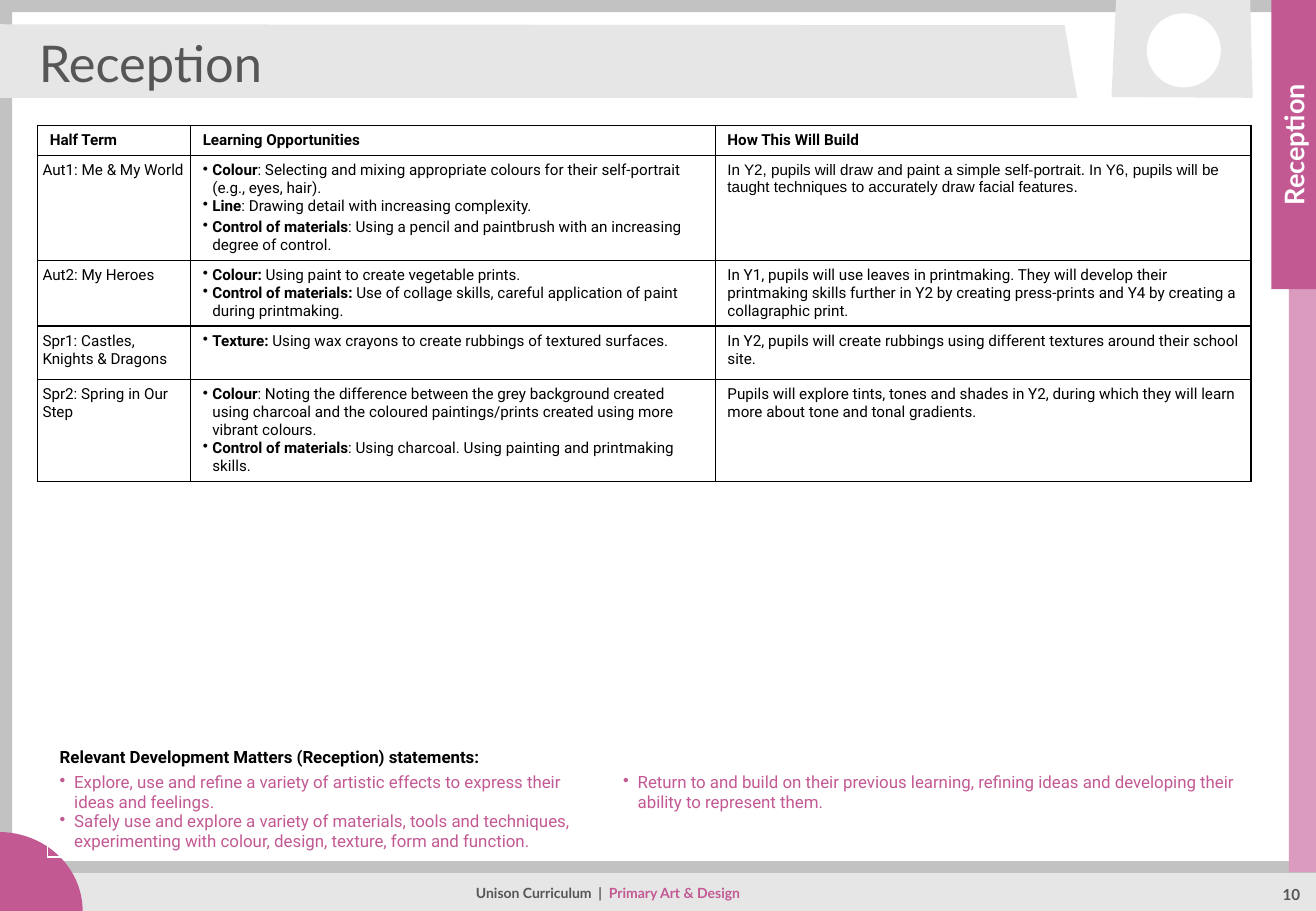
from pptx import Presentation
from pptx.dml.color import RGBColor
from pptx.enum.shapes import MSO_CONNECTOR, MSO_SHAPE
from pptx.enum.text import MSO_ANCHOR, MSO_AUTO_SIZE, PP_ALIGN
from pptx.oxml import parse_xml
from pptx.oxml.ns import nsdecls
from pptx.util import Pt

HUES = {
    "pink": "C35993", "pale": "DB9BBE", "grey": "C2C2C2", "light": "E6E6E6",
    "dark": "565656", "black": "000000", "white": "FFFFFF",
}

TERMS = [
    ("Aut1: Me & My World",
     ["*Colour*: Selecting and mixing appropriate colours for their self-portrait (e.g., eyes, hair).",
      "*Line*: Drawing detail with increasing complexity.",
      "*Control of materials*: Using a pencil and paintbrush with an increasing degree of control."],
     "In Y2, pupils will draw and paint a simple self-portrait. In Y6, pupils will be taught techniques to accurately draw facial features."),
    ("Aut2: My Heroes",
     ["*Colour:* Using paint to create vegetable prints.",
      "*Control of materials:* Use of collage skills, careful application of paint during printmaking."],
     "In Y1, pupils will use leaves in printmaking. They will develop their printmaking skills further in Y2 by creating press-prints and Y4 by creating a collagraphic print."),
    ("Spr1: Castles, Knights & Dragons",
     ["*Texture:* Using wax crayons to create rubbings of textured surfaces."],
     "In Y2, pupils will create rubbings using different textures around their school site."),
    ("Spr2: Spring in Our Step",
     ["*Colour*: Noting the difference between the grey background created using charcoal and the coloured paintings/prints created using more vibrant colours.",
      "*Control of materials*: Using charcoal. Using painting and printmaking skills."],
     "Pupils will explore tints, tones and shades in Y2, during which they will learn more about tone and tonal gradients."),
]

AIMS = [
    ["Explore, use and refine a variety of artistic effects to express their ideas and feelings.",
     "Safely use and explore a variety of materials, tools and techniques, experimenting with colour, design, texture, form and function."],
    ["Return to and build on their previous learning, refining ideas and developing their ability to represent them."],
]


class Page:
    def __init__(self, deck):
        self.slide = deck.slides.add_slide(deck.slide_layouts[5])
        self.shapes = self.slide.shapes

    def hue(self, name):
        return RGBColor.from_string(HUES[name])

    def paint(self, shape, hue):
        shape.fill.solid()
        shape.fill.fore_color.rgb = self.hue(hue)
        shape.line.fill.background()
        shape.shadow.inherit = False
        return shape

    def shape(self, kind, box, hue):
        return self.paint(self.shapes.add_shape(kind, *map(Pt, box)), hue)

    def outline(self, dots, hue):
        dots = [(Pt(x), Pt(y)) for x, y in dots]
        form = self.shapes.build_freeform(*dots[0], scale=1.0)
        form.add_line_segments(dots[1:], close=True)
        return self.paint(form.convert_to_shape(), hue)

    def line(self, ends, hue, width):
        rule = self.shapes.add_connector(MSO_CONNECTOR.STRAIGHT, *map(Pt, ends))
        rule.line.color.rgb = self.hue(hue)
        rule.line.width = Pt(width)
        rule.element.spPr.append(parse_xml(f"<a:effectLst {nsdecls('a')}/>"))

    def style(self, font, size, hue, face, bold):
        font.size, font.name, font.bold = Pt(size), face, bold
        font.color.rgb = self.hue(hue)

    def text(self, frame, lines, size, hue="black", face="Roboto",
             bold=False, align=PP_ALIGN.LEFT, dent=0, after=0):
        frame.text = "\n".join(line.replace("*", "") for line in lines)
        for spot, (para, line) in enumerate(zip(frame.paragraphs, lines)):
            para.alignment = align
            if dent:
                prop = para._p.get_or_add_pPr()
                prop.set("marL", str(Pt(dent)))
                prop.set("indent", str(-Pt(dent)))
                prop.append(parse_xml(f'<a:buChar {nsdecls("a")} char="•"/>'))
            if spot:
                para.space_after = Pt(after)
            parts = line.split("*")
            if len(parts) > 1:
                para.clear()
                for turn, part in enumerate(parts):
                    if part:
                        run = para.add_run()
                        run.text = part
                        self.style(run.font, size, hue, face, turn % 2 == 1)
            else:
                self.style(para.runs[0].font, size, hue, face, bold)

    def place(self, shape, box):
        shape.left, shape.top, shape.width, shape.height = map(Pt, box)
        frame = shape.text_frame
        frame.word_wrap = True
        frame.auto_size = MSO_AUTO_SIZE.NONE
        frame.vertical_anchor = MSO_ANCHOR.MIDDLE
        return frame

    def title(self, text, box, size):
        head = self.shapes.title
        self.shapes.element.append(head.element)
        self.text(self.place(head, box), [text], size, "dark", "Lato")

    def label(self, text, box, size, hue, turn=0):
        note = self.shapes.add_textbox(*map(Pt, box))
        note.rotation = turn
        self.text(self.place(note, box), [text], size, hue, "Lato", True, PP_ALIGN.CENTER)
        return note.text_frame.paragraphs[0]

    def table(self, spot, cols, rows, edge=None):
        size = (sum(cols), sum(rows))
        grid = self.shapes.add_table(len(rows), len(cols), *map(Pt, spot + size)).table
        grid.first_row = grid.horz_banding = False
        for col, width in zip(grid.columns, cols):
            col.width = Pt(width)
        for row, height in zip(grid.rows, rows):
            row.height = Pt(height)
        for cell in grid.iter_cells():
            if edge:
                self.edge(cell, edge)
            cell.fill.background()
        return grid

    def edge(self, cell, hue):
        prop = cell._tc.get_or_add_tcPr()
        for side in "LRTB":
            prop.append(parse_xml(
                f'<a:ln{side} {nsdecls("a")} w="{Pt(1)}"><a:solidFill>'
                f'<a:srgbClr val="{HUES[hue]}"/></a:solidFill></a:ln{side}>'))

    def pad(self, cell, side, top, foot):
        cell.margin_left = cell.margin_right = Pt(side)
        cell.margin_top, cell.margin_bottom = Pt(top), Pt(foot)


def frame(page):
    rim = page.shape(MSO_SHAPE.FRAME, (0, 0, 780, 540), "grey")
    rim.adjustments[0] = 7.2 / 540
    page.shape(MSO_SHAPE.RECTANGLE, (23, 517, 757, 23), "light")
    page.line((3.6, 514.1, 780, 514.1), "grey", 7)
    page.shape(MSO_SHAPE.ARC, (-50.4, 493.2, 99.4, 93.6), "pink")
    page.outline([(0, 14.4), (631, 15), (638.5, 58), (0, 58)], "light")
    page.shape(MSO_SHAPE.RECTANGLE, (763.9, 0, 16.1, 517), "pale")
    page.shape(MSO_SHAPE.RECTANGLE, (753.5, 0, 26.5, 171.5), "pink")
    page.outline([(661.5, 0), (741, 0), (742.5, 58), (658.8, 57.6)], "light")
    page.shape(MSO_SHAPE.OVAL, (679.7, 7.9, 43.9, 43.9), "white")

    foot = page.label("*Unison Curriculum  |  *Primary Art & Design", (147.6, 519, 425.5, 21), 8.3, "dark")
    tail = foot.runs[1].font
    tail.bold, tail.color.rgb = True, page.hue("pink")
    page.label("10", (745.4, 519.5, 40, 21), 9, "dark")
    page.title("Reception", (15.8, 18.7, 606, 36), 30)
    page.label("Reception", (681.1, 73.4, 171.4, 24.5), 16, "white", 270)


def terms(page):
    grid = page.table((22.3, 74.4), (90.7, 311, 317.5), (17.8, 62, 39, 31.8, 60.2), "black")
    heads = ("Half Term", "Learning Opportunities", "How This Will Build")
    for col, head in enumerate(heads):
        page.text(grid.cell(0, col).text_frame, [head], 9, bold=True)
    for row, (term, tasks, build) in enumerate(TERMS, 1):
        name, work, plan = (grid.cell(row, col) for col in range(3))
        page.pad(name, 2.9, 3.6, 3.6)
        page.text(name.text_frame, [term], 9)
        page.text(work.text_frame, tasks, 9, dent=5.7, after=2)
        page.text(plan.text_frame, [build], 9, face="Arial" if row == 1 else "Roboto")


def aims(page):
    grid = page.table((28.2, 443.5), (334, 389.5), (14.6, 49.8))
    for cell in grid.iter_cells():
        page.pad(cell, 7.2, 0, 2.9)
    head = grid.cell(0, 0)
    head.merge(grid.cell(0, 1))
    page.text(head.text_frame, ["Relevant Development Matters (Reception) statements:"], 10, bold=True)
    for col, lines in enumerate(AIMS):
        page.text(grid.cell(1, col).text_frame, lines, 10, "pink", dent=8.6)


def main():
    deck = Presentation()
    deck.slide_width, deck.slide_height = Pt(780), Pt(540)
    page = Page(deck)
    frame(page)
    terms(page)
    aims(page)
    deck.save("out.pptx")


if __name__ == "__main__":
    main()
